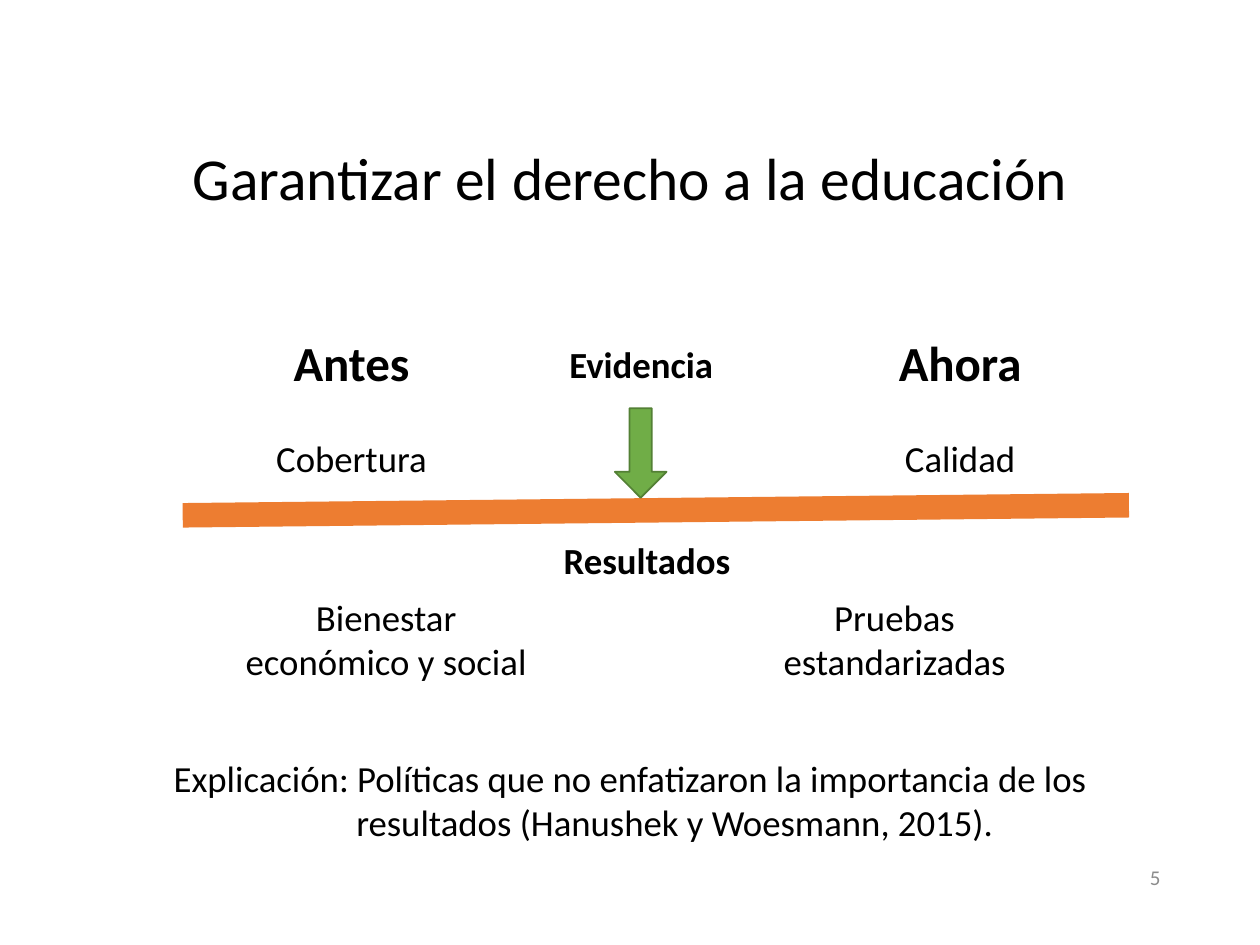
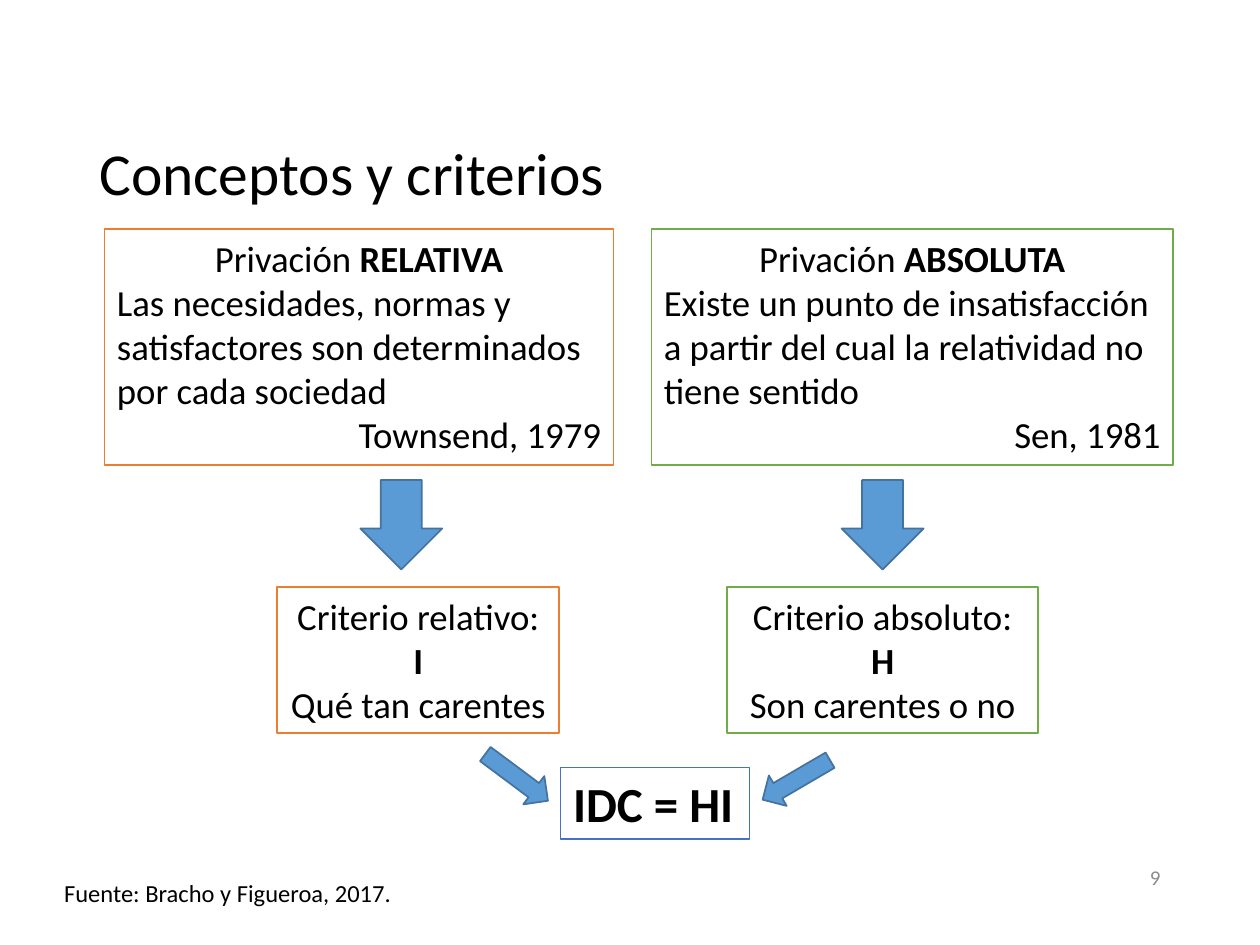
from dataclasses import dataclass

from pptx import Presentation
from pptx.dml.color import RGBColor
from pptx.enum.shapes import MSO_CONNECTOR, MSO_SHAPE
from pptx.enum.text import MSO_ANCHOR, MSO_AUTO_SIZE, PP_ALIGN
from pptx.oxml.ns import qn
from pptx.util import Inches, Pt

LEFT, CENTER, RIGHT = PP_ALIGN.LEFT, PP_ALIGN.CENTER, PP_ALIGN.RIGHT
TOP, MIDDLE = MSO_ANCHOR.TOP, MSO_ANCHOR.MIDDLE
NO_AUTOFIT = MSO_AUTO_SIZE.NONE
STRAIGHT = MSO_CONNECTOR.STRAIGHT
RECTANGLE = MSO_SHAPE.RECTANGLE
DOWN_ARROW, RIGHT_ARROW = MSO_SHAPE.DOWN_ARROW, MSO_SHAPE.RIGHT_ARROW
TITLE_ONLY = 5


@dataclass(frozen=True)
class Theme:
    font: str = "Calibri"
    ink: str = "000000"
    paper: str = "FFFFFF"
    muted: str = "8C8C8C"
    orange: str = "ED7D31"
    green: str = "70AD47"
    dark_green: str = "538035"
    blue: str = "5B9BD5"
    dark_blue: str = "43739E"
    frame_blue: str = "4472C4"
    title: float = 34
    heading: float = 28
    body: float = 21
    source: float = 14
    number: float = 12


THEME = Theme()


@dataclass
class Line:
    """One paragraph; bold_tail is a bold run that follows the text."""
    text: str
    bold_tail: str = ""
    size: float = THEME.body
    bold: bool = False
    color: str = THEME.ink
    align: PP_ALIGN = LEFT
    before: float = 0
    indent: float = 0
    spacing: float = 1.0


class Deck:
    def __init__(self, theme):
        self.theme = theme
        self.presentation = Presentation()
        self.presentation.slide_width = Inches(10)
        self.presentation.slide_height = Inches(7.5)
        self.slide = None

    def start_slide(self, title, top, height, align, number):
        layout = self.presentation.slide_layouts[TITLE_ONLY]
        self.slide = self.presentation.slides.add_slide(layout)
        shape = self.slide.shapes.title
        shape.left, shape.top = Inches(0.69), Inches(top)
        shape.width, shape.height = Inches(8.62), Inches(height)
        self.fill_text(shape, [Line(title, size=self.theme.title, align=align, spacing=0.9)])
        self.text((7.06, 6.76, 2.25, 0.4),
                  [Line(number, size=self.theme.number, color=self.theme.muted, align=RIGHT)],
                  anchor=MIDDLE)

    def fill_text(self, shape, lines, anchor=TOP, wrap=True):
        frame = shape.text_frame
        frame.word_wrap = wrap
        frame.auto_size = NO_AUTOFIT
        frame.vertical_anchor = anchor
        for index, line in enumerate(lines):
            paragraph = frame.add_paragraph() if index else frame.paragraphs[0]
            paragraph.alignment = line.align
            paragraph.line_spacing = line.spacing
            paragraph.space_before = Pt(line.before)
            if line.indent:
                properties = paragraph._p.get_or_add_pPr()
                properties.set("marL", str(Inches(line.indent)))
                properties.set("indent", "0")
            font = paragraph.font
            font.name, font.size, font.bold = self.theme.font, Pt(line.size), line.bold
            font.color.rgb = RGBColor.from_string(line.color)
            paragraph.add_run().text = line.text
            if line.bold_tail:
                tail = paragraph.add_run()
                tail.text = line.bold_tail
                tail.font.bold = True

    def text(self, box, lines, anchor=TOP, wrap=True):
        shape = self.slide.shapes.add_textbox(*map(Inches, box))
        self.fill_text(shape, lines, anchor, wrap)

    def shape(self, kind, box, outline, fill=None, line_width=1.0):
        shape = self.slide.shapes.add_shape(kind, *map(Inches, box))
        shape.shadow.inherit = False
        if fill:
            shape.fill.solid()
            shape.fill.fore_color.rgb = RGBColor.from_string(fill)
        else:
            shape.fill.background()
        shape.line.color.rgb = RGBColor.from_string(outline)
        shape.line.width = Pt(line_width)
        return shape

    def panel(self, box, outline, lines, fill=THEME.paper, line_width=1.0):
        shape = self.shape(RECTANGLE, box, outline, fill, line_width)
        self.fill_text(shape, lines)

    def arrow(self, kind, box, fill, outline, rotation=0, shaft=0.5):
        shape = self.shape(kind, box, outline, fill)
        shape.rotation = rotation
        shape.adjustments[0] = shaft

    def line(self, start, end, color, width):
        connector = self.slide.shapes.add_connector(STRAIGHT, *map(Inches, start + end))
        connector.line.color.rgb = RGBColor.from_string(color)
        connector.line.width = Pt(width)
        properties = connector._element.spPr
        properties.append(properties.makeelement(qn("a:effectLst"), {}))


def build_right_to_education(deck):
    theme = deck.theme
    deck.start_slide("Garantizar el derecho a la educación", 1.13, 0.67, CENTER, "5")
    deck.line((1.45, 4.09), (8.96, 4.01), theme.orange, 14)

    for period, goal, left, width in (("Antes", "Cobertura", 2.09, 1.4),
                                      ("Ahora", "Calidad", 6.98, 1.28)):
        deck.text((left, 2.59, width, 1.28), [
            Line(period, size=theme.heading, bold=True, align=CENTER),
            Line(goal, align=CENTER, before=25.6)])

    deck.arrow(DOWN_ARROW, (4.88, 3.24, 0.41, 0.71), theme.green, theme.dark_green, shaft=0.43)

    for label, top, width in (("Evidencia", 2.66, 1.5), ("Resultados", 4.22, 1.59)):
        deck.text((4.34, top, width, 0.45), [Line(label, bold=True, align=CENTER)])

    for result, left, width in (("Bienestar económico y social", 1.79, 2.55),
                                ("Pruebas estandarizadas", 5.93, 2.34)):
        deck.text((left, 4.67, width, 0.81), [Line(result, align=CENTER)])

    deck.text((1.28, 5.95, 7.6, 0.81), [
        Line("Explicación: Políticas que no enfatizaron la importancia de los"),
        Line("resultados (Hanushek y Woesmann, 2015).", indent=1.45)])


def build_concepts(deck):
    theme = deck.theme
    deck.start_slide("Conceptos y criterios", 1.09, 0.61, LEFT, "9")

    concepts = (
        (0.83, 4.04, theme.orange, "RELATIVA",
         "Las necesidades, normas y satisfactores son determinados por cada sociedad",
         "Townsend, 1979"),
        (5.17, 4.14, theme.green, "ABSOLUTA",
         "Existe un punto de insatisfacción a partir del cual la relatividad no tiene sentido",
         "Sen, 1981"))
    for left, width, color, kind, definition, author in concepts:
        deck.panel((left, 1.82, width, 1.87), color, [
            Line("Privación ", bold_tail=kind, align=CENTER),
            Line(definition),
            Line(author, align=RIGHT)])

    criteria = (
        (2.2, 2.24, theme.orange, "Criterio relativo: ", "I", "Qué tan carentes"),
        (5.77, 2.47, theme.green, "Criterio absoluto: ", "H", "Son carentes o no"))
    for left, width, color, criterion, symbol, question in criteria:
        deck.panel((left, 4.66, width, 1.16), color, [
            Line(criterion, bold_tail=symbol, align=CENTER),
            Line(question, align=CENTER)])

    for left in (2.86, 6.68):
        deck.arrow(DOWN_ARROW, (left, 3.81, 0.65, 0.71), theme.blue, theme.dark_blue)
    for left, top, rotation in ((3.79, 6.03, 36.7), (6.01, 6.05, 149.7)):
        deck.arrow(RIGHT_ARROW, (left, top, 0.62, 0.28), theme.blue, theme.dark_blue, rotation)

    deck.panel((4.45, 6.09, 1.5, 0.57), theme.frame_blue,
               [Line("IDC = HI", size=theme.heading, bold=True)],
               fill=None, line_width=0.75)
    deck.text((0.41, 6.92, 2.82, 0.34),
              [Line("Fuente: Bracho y Figueroa, 2017.", size=theme.source)], wrap=False)


def main():
    deck = Deck(THEME)
    build_right_to_education(deck)
    build_concepts(deck)
    deck.presentation.save("out.pptx")


if __name__ == "__main__":
    main()
